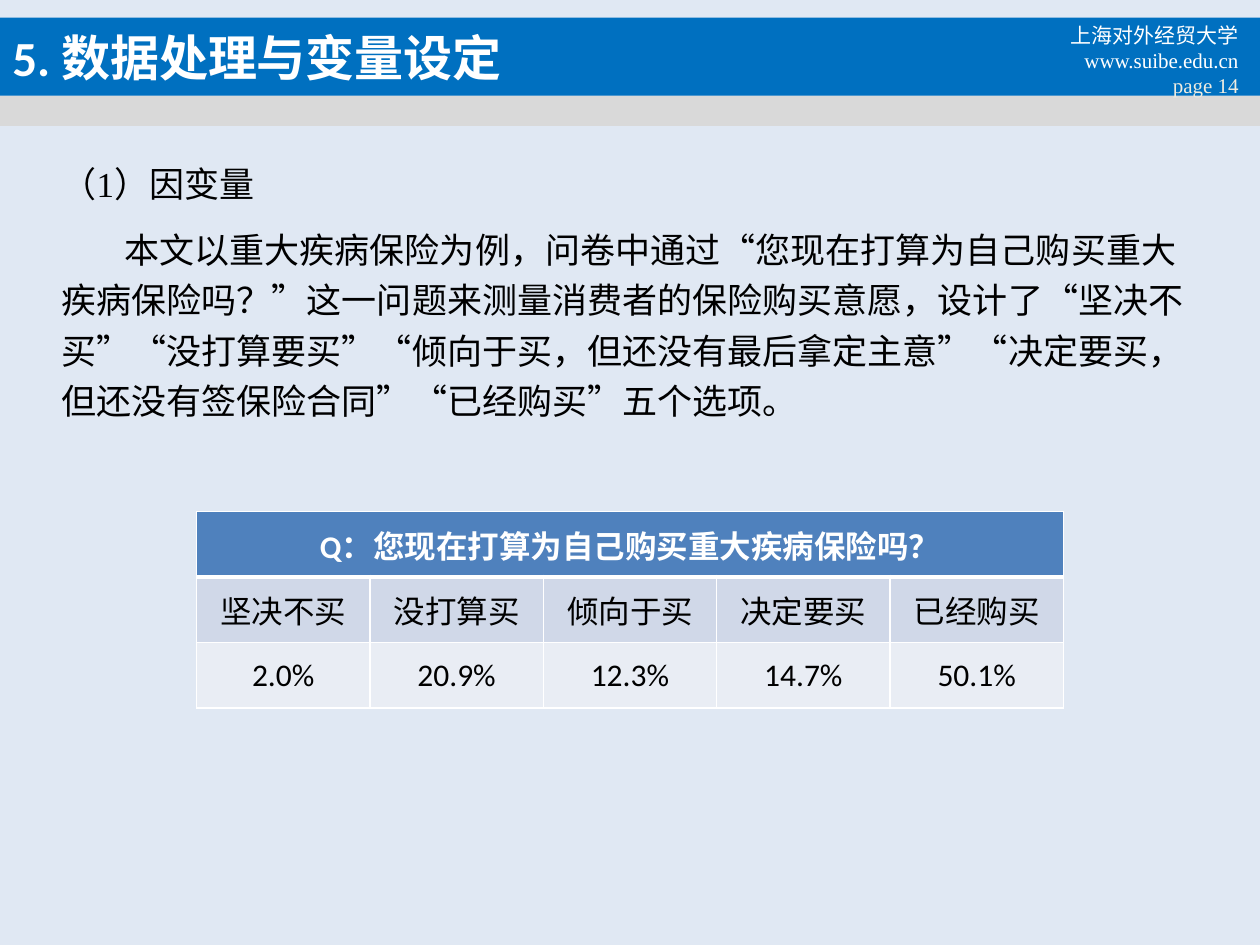
from typing import Any, NamedTuple

from pptx import Presentation
from pptx.dml.color import RGBColor as Rgb
from pptx.enum.shapes import MSO_SHAPE as Kind
from pptx.enum.text import MSO_ANCHOR as Anchor, PP_ALIGN as Align
from pptx.oxml import parse_xml
from pptx.oxml.ns import nsdecls
from pptx.util import Inches, Pt

HUES = {
    "back": "E0E8F3", "gray": "D9D9D9", "blue": "0070C0", "white": "FFFFFF",
    "cream": "EEECE1", "black": "000000", "head": "4F81BD",
    "dark": "D0D8E8", "light": "E9EDF4",
}
SANS, SERIF = "Calibri", "Times New Roman"


class Box(NamedTuple):
    left: float
    top: float
    width: float
    height: float


class Run(NamedTuple):
    text: str
    size: int
    face: str
    hue: str
    bold: bool = False


class Row(NamedTuple):
    cells: list[list[Run]]
    fill: str
    above: int
    below: int


def color(hue: str) -> Rgb:
    """Look up a named colour."""
    return Rgb.from_string(HUES[hue])


def apply(item: Any, form: dict[str, Any]) -> None:
    """Set attributes from a dict of format values."""
    for key, value in form.items():
        setattr(item, key, value)


def write(para: Any, runs: list[Run], form: dict[str, Any]) -> None:
    """Fill a paragraph with styled runs."""
    apply(para, form)
    for part in runs:
        run = para.add_run()
        run.text = part.text
        apply(run.font, {"size": Pt(part.size), "name": part.face, "bold": part.bold})
        run.font.color.rgb = color(part.hue)


def band(slide: Any, box: Box, hue: str) -> Any:
    """Draw a plain filled bar."""
    bar = slide.shapes.add_shape(Kind.RECTANGLE, *map(Inches, box))
    bar.shadow.inherit = False
    bar.fill.solid()
    bar.fill.fore_color.rgb = color(hue)
    bar.line.fill.background()
    return bar


def label(slide: Any, box: Box, anchor: Anchor) -> Any:
    """Add a wrapping text box and return its frame."""
    frame = slide.shapes.add_textbox(*map(Inches, box)).text_frame
    apply(frame, {"word_wrap": True, "vertical_anchor": anchor})
    return frame


def edge(cell: Any, side: str, width: int) -> None:
    """Add a white border to one side of a cell."""
    cell._tc.get_or_add_tcPr().append(parse_xml(
        f'<a:ln{side} {nsdecls("a")} w="{Pt(width)}"><a:solidFill>'
        f'<a:srgbClr val="{HUES["white"]}"/></a:solidFill></a:ln{side}>'))


def grid(slide: Any, box: Box, rows: list[Row], cols: int) -> None:
    """Draw the survey table with a merged heading."""
    table = slide.shapes.add_table(len(rows), cols, *map(Inches, box)).table
    apply(table, {"first_row": False, "horz_banding": False})
    table.cell(0, 0).merge(table.cell(0, cols - 1))
    for r, row in enumerate(rows):
        for c in range(cols):
            cell = table.cell(r, c)
            for side, width in zip("LRTB", (1, 1, row.above, row.below)):
                edge(cell, side, width)
            cell.fill.solid()
            cell.fill.fore_color.rgb = color(row.fill)
            cell.vertical_anchor = Anchor.MIDDLE
            if c < len(row.cells):
                write(cell.text_frame.paragraphs[0], row.cells[c],
                      {"alignment": Align.CENTER})


def main() -> None:
    """Build the slide."""
    deck = Presentation()
    apply(deck, {"slide_width": Inches(10), "slide_height": Inches(7.5)})
    slide = deck.slides.add_slide(deck.slide_layouts[6])
    slide.background.fill.solid()
    slide.background.fill.fore_color.rgb = color("back")

    band(slide, Box(0, 0.76, 10, 0.24), "gray")
    title = band(slide, Box(0, 0.14, 10, 0.62), "blue").text_frame
    title.vertical_anchor = Anchor.MIDDLE
    write(title.paragraphs[0], [Run("5. 数据处理与变量设定", 28, SANS, "white", True)],
          {"alignment": Align.LEFT})

    school = label(slide, Box(7.6, 0.17, 2.33, 0.61), Anchor.MIDDLE)
    right = {"alignment": Align.RIGHT}
    write(school.paragraphs[0], [Run("上海对外经贸大学", 12, SERIF, "white")], right)
    site = school.add_paragraph()
    write(site, [Run("www.suibe.edu.cn", 12, SERIF, "white")], right)
    site.add_line_break()
    write(site, [Run("page 14", 12, SERIF, "cream")], right)

    body = label(slide, Box(0.39, 1.17, 9.14, 4.95), Anchor.TOP)
    space = {"line_spacing": 1.2, "space_after": Pt(9)}
    write(body.paragraphs[0], [Run("（1）因变量", 20, SERIF, "black")], space)
    prose = body.add_paragraph()
    prose._p.get_or_add_pPr().set("indent", str(Inches(0.5)))
    write(prose, [Run(
        "本文以重大疾病保险为例，问卷中通过“您现在打算为自己购买重大疾病保险吗？”"
        "这一问题来测量消费者的保险购买意愿，设计了“坚决不买”“没打算要买”"
        "“倾向于买，但还没有最后拿定主意”“决定要买，但还没有签保险合同”"
        "“已经购买”五个选项。", 20, SERIF, "black")], space)

    ask = [Run("Q：", 18, SANS, "white", True),
           Run("您现在打算为自己购买重大疾病保险吗？", 18, SERIF, "white", True)]
    votes = {"坚决不买": 2.0, "没打算买": 20.9, "倾向于买": 12.3,
             "决定要买": 14.7, "已经购买": 50.1}
    names = [[Run(name, 18, SANS, "black")] for name in votes]
    rates = [[Run(f"{rate:.1f}%", 18, SANS, "black")] for rate in votes.values()]
    grid(slide, Box(1.56, 4.06, 6.88, 1.56),
         [Row([ask], "head", 1, 3), Row(names, "dark", 3, 1),
          Row(rates, "light", 1, 1)], len(votes))
    deck.save("out.pptx")


if __name__ == "__main__":
    main()
